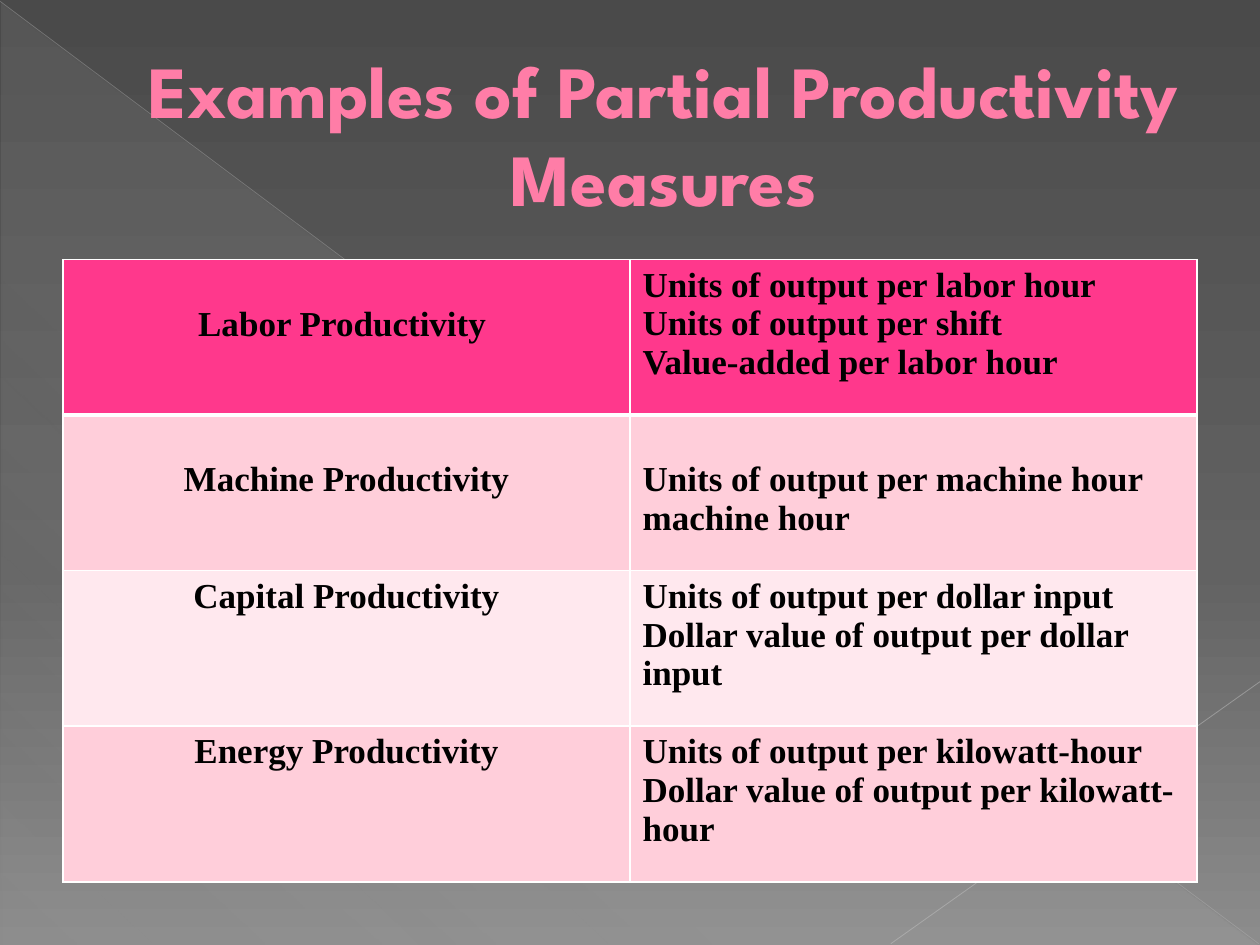
"""Build the slide on partial productivity measures."""
import dataclasses
import typing

import lxml.etree
import pptx
import pptx.dml.color
import pptx.enum.shapes
import pptx.enum.text
import pptx.oxml.ns
import pptx.util

Inches = pptx.util.Inches
Pt = pptx.util.Pt
Align = pptx.enum.text.PP_ALIGN
qn = pptx.oxml.ns.qn

HUES = {
    "title": "FF7DA7", "edge": "B12761", "text": "000000", "rule": "FFFFFF",
    "head": "FF388C", "odd": "FFCEDA", "even": "FFE8EE",
    "dark": "4A4A4A", "mid": "626262", "light": "8C8C8C",
    "veil": "D2D2D2", "long": "BFBFBF", "short": "C6C6C6",
}


@dataclasses.dataclass
class Stop:
    place: int
    hue: str
    alpha: int = 100


@dataclasses.dataclass
class Line:
    start: tuple[float, float]
    end: tuple[float, float]
    hue: str
    width: float
    alpha: int


@dataclasses.dataclass
class Row:
    name: str
    facts: list[str]
    fill: str
    drops: tuple[bool, bool] = (False, False)


BACK = [Stop(0, "dark"), Stop(60, "mid"), Stop(100, "light")]
VEIL = [Stop(0, "veil", 10), Stop(70, "veil", 8), Stop(100, "veil", 1)]
LINES = [
    Line((0, 0.01), (9.99, 7.49), "long", 0.39, 35),
    Line((10, 5.41), (7.07, 7.49), "short", 0.47, 45),
]
ROWS = [
    Row("Labor Productivity ",
        ["Units of output per labor hour", "Units of output per shift",
         "Value-added per labor hour"], "head", (True, False)),
    Row("Machine Productivity",
        ["Units of output per machine hour machine hour"], "odd", (True, True)),
    Row("Capital Productivity",
        ["Units of output per dollar input",
         "Dollar value of output per dollar input"], "even"),
    Row("Energy Productivity",
        ["Units of output per kilowatt-hour "
         "Dollar value of output per kilowatt-hour"], "odd"),
]


def shade(hue: str) -> pptx.dml.color.RGBColor:
    return pptx.dml.color.RGBColor.from_string(HUES[hue])


def add(root: typing.Any, tag: str, **attrs: typing.Any) -> typing.Any:
    return lxml.etree.SubElement(
        root, qn(tag), {key: str(val) for key, val in attrs.items()})


def tint(root: typing.Any, hue: str, alpha: int = 100) -> None:
    color = add(root, "a:srgbClr", val=HUES[hue])
    if alpha < 100:
        add(color, "a:alpha", val=alpha * 1000)


def blend(fill: typing.Any, root: typing.Any, stops: list[Stop], angle: int) -> None:
    fill.gradient()
    grad = next(root.iter(qn("a:gradFill")))
    for child in list(grad):
        grad.remove(child)
    group = add(grad, "a:gsLst")
    for stop in stops:
        tint(add(group, "a:gs", pos=stop.place * 1000), stop.hue, stop.alpha)
    add(grad, "a:lin", ang=angle * 60000, scaled=0)


def write(frame: typing.Any, texts: list[str], *, font: str = "Times New Roman",
          size: float = 20, hue: str = "text", align: Align = Align.LEFT,
          edge: str | None = None) -> None:
    frame.word_wrap = True
    for spot, text in enumerate(texts):
        para = frame.add_paragraph() if spot else frame.paragraphs[0]
        para.alignment = align
        run = para.add_run()
        run.text = text
        run.font.name = font
        run.font.size = Pt(size)
        run.font.bold = True
        run.font.color.rgb = shade(hue)
        if edge:
            props = run.font._element
            line = add(props, "a:ln", w=Pt(0.5))
            tint(add(line, "a:solidFill"), edge)
            props.insert(0, line)


def draw_line(slide: typing.Any, line: Line) -> None:
    ends = [Inches(num) for num in line.start + line.end]
    shape = slide.shapes.add_connector(
        pptx.enum.shapes.MSO_CONNECTOR.STRAIGHT, *ends)
    shape.line.width = Pt(line.width)
    shape.line.color.rgb = shade(line.hue)
    color = next(shape._element.spPr.iter(qn("a:srgbClr")))
    add(color, "a:alpha", val=line.alpha * 1000)
    add(shape._element.spPr, "a:effectLst")


def draw_cell(cell: typing.Any, texts: list[str], fill: str, align: Align,
              drop: bool) -> None:
    props = cell._tc.get_or_add_tcPr()
    for side in "LRTB":
        thick = 3 if side == "B" and fill == "head" else 1
        edge = add(props, f"a:ln{side}", w=Pt(thick))
        tint(add(edge, "a:solidFill"), "rule")
    cell.fill.solid()
    cell.fill.fore_color.rgb = shade(fill)
    cell.margin_top = Inches(0.36 if drop else 0.05)
    write(cell.text_frame, texts, align=align)


def draw_table(slide: typing.Any, rows: list[Row]) -> None:
    table = slide.shapes.add_table(
        len(rows), 2, Inches(0.5), Inches(2.06), Inches(9), Inches(4.94)).table
    for spot, row in enumerate(rows):
        draw_cell(table.cell(spot, 0), [row.name], row.fill, Align.CENTER, row.drops[0])
        draw_cell(table.cell(spot, 1), row.facts, row.fill, Align.LEFT, row.drops[1])


def draw_title(slide: typing.Any) -> None:
    box = slide.shapes.add_textbox(Inches(0.5), Inches(0.29), Inches(9), Inches(1.53))
    frame = box.text_frame
    frame.margin_left = Inches(0.63)
    frame.vertical_anchor = pptx.enum.text.MSO_ANCHOR.MIDDLE
    write(frame, ["Examples of Partial Productivity Measures"],
          font="League Spartan", size=42, hue="title", align=Align.CENTER, edge="edge")


def main() -> None:
    deck = pptx.Presentation()
    deck.slide_width, deck.slide_height = Inches(10), Inches(7.5)
    slide = deck.slides.add_slide(deck.slide_layouts[6])
    blend(slide.background.fill, slide._element, BACK, 90)
    veil = slide.shapes.add_shape(
        pptx.enum.shapes.MSO_SHAPE.RIGHT_TRIANGLE,
        Inches(0.01), Inches(0.02), Inches(9.98), Inches(7.48))
    veil.shadow.inherit = False
    veil.line.fill.background()
    blend(veil.fill, veil._element, VEIL, 133)
    for line in LINES:
        draw_line(slide, line)
    draw_title(slide)
    draw_table(slide, ROWS)
    deck.save("out.pptx")


if __name__ == "__main__":
    main()
